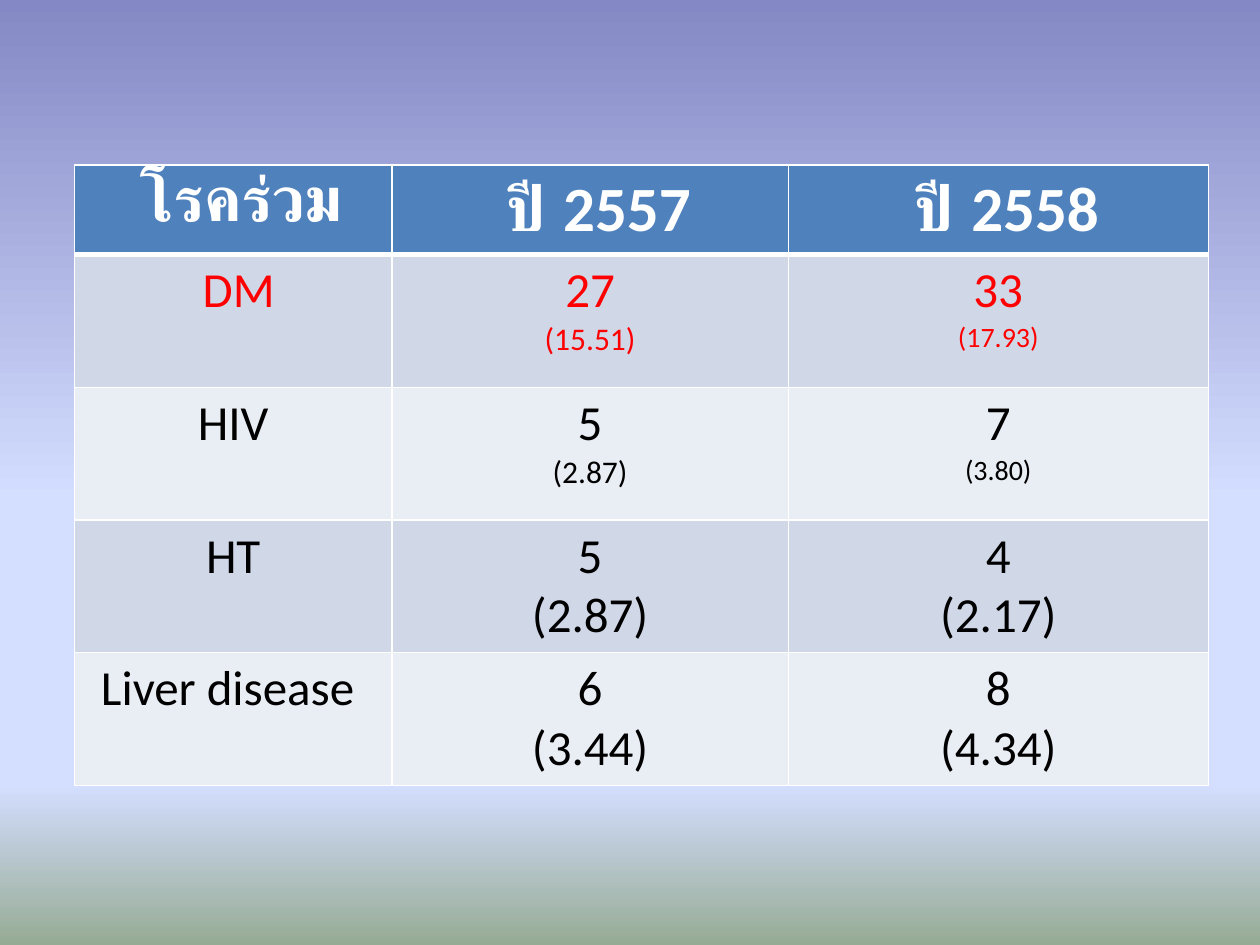
from lxml.etree import SubElement
from pptx import Presentation
from pptx.dml.color import RGBColor
from pptx.enum.text import PP_ALIGN
from pptx.oxml import parse_xml
from pptx.oxml.ns import nsdecls, qn
from pptx.util import Pt


def color(code):
    return RGBColor.from_string(code)


def write(para, text, size=28, ink="000000", bold=False):
    para.alignment = PP_ALIGN.CENTER
    span = para.add_run()
    span.text = text
    span.font.name = "Calibri"
    span.font.size = Pt(size)
    span.font.bold = bold
    span.font.color.rgb = color(ink)


deck = Presentation()
deck.slide_width, deck.slide_height = Pt(720), Pt(540)
page = deck.slides.add_slide(deck.slide_layouts[6])

backdrop = page.background.fill
backdrop.gradient()
backdrop.gradient_angle = 270
stops = page.element.find(".//" + qn("a:gsLst"))
for stop in list(stops):
    stops.remove(stop)
for percent, code in [(0, "8488C4"), (53, "D4DEFF"), (83, "D4DEFF"), (100, "96AB94")]:
    stop = SubElement(stops, qn("a:gs"), pos=str(percent * 1000))
    SubElement(stop, qn("a:srgbClr"), val=code)

headings = [" โรคร่วม", " ปี 2557", " ปี 2558"]
diseases = [
    (" DM", "27", "(15.51)", "33", "(17.93)", 18, 16, "FF0000"),
    ("HIV", "5", "(2.87)", "7", "(3.80)", 18, 16, "000000"),
    ("HT", "5", "(2.87)", "4", "(2.17)", 28, 28, "000000"),
    ("Liver disease ", "6", "(3.44)", "8", "(4.34)", 28, 28, "000000"),
]
widths = [181.5, 226.5, 240]
heights = [50.6] + [75.8] * 4

table = page.shapes.add_table(
    5, 3, Pt(42.5), Pt(94.3), Pt(sum(widths)), Pt(sum(heights))
).table
for column, width in zip(table.columns, widths):
    column.width = Pt(width)
for row, height in zip(table.rows, heights):
    row.height = Pt(height)

for index, heading in enumerate(headings):
    write(table.cell(0, index).text_frame.paragraphs[0], heading, size=36, ink="FFFFFF", bold=True)

for index, (name, first, first_rate, second, second_rate, first_size, second_size, ink) in enumerate(diseases, 1):
    write(table.cell(index, 0).text_frame.paragraphs[0], name, ink=ink)
    years = [(first, first_rate, first_size), (second, second_rate, second_size)]
    for year, (count, rate, size) in enumerate(years, 1):
        box = table.cell(index, year).text_frame
        write(box.paragraphs[0], count, ink=ink)
        write(box.add_paragraph(), rate, size=size, ink=ink)

for index, row in enumerate(table.rows):
    fill = "4F81BD" if index == 0 else ["E9EDF4", "D0D8E8"][index % 2]
    thickness = {"L": 1, "R": 1, "T": 3 if index == 1 else 1, "B": 3 if index == 0 else 1}
    for cell in row.cells:
        cell.fill.solid()
        cell.fill.fore_color.rgb = color(fill)
        for order, (side, weight) in enumerate(thickness.items()):
            border = parse_xml(
                f'<a:ln{side} {nsdecls("a")} w="{Pt(weight)}"><a:solidFill>'
                f'<a:srgbClr val="FFFFFF"/></a:solidFill></a:ln{side}>'
            )
            cell._tc.tcPr.insert(order, border)

deck.save("out.pptx")
